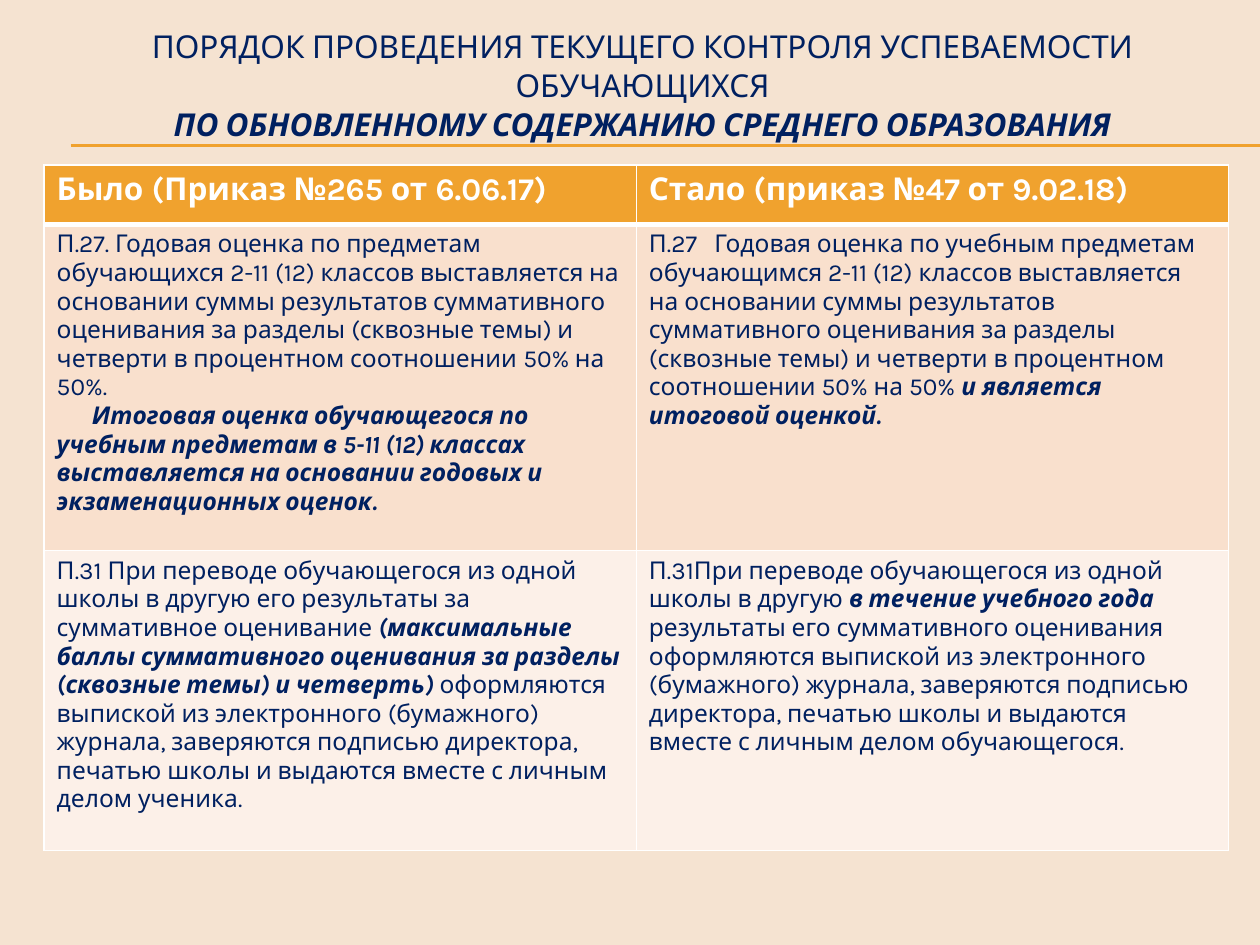
from pptx import Presentation
from pptx.dml.color import RGBColor
from pptx.enum.shapes import MSO_CONNECTOR
from pptx.enum.text import MSO_ANCHOR, PP_ALIGN
from pptx.util import Inches, Pt
from pptx.oxml.ns import qn
from lxml.etree import SubElement, Element

ink = {"back": "F5E3D1", "gold": "F0A22E", "navy": "002060",
       "white": "FFFFFF", "peach": "F9E0CD", "cream": "FCF0E8"}
font = "Karla"


def add_run(para, text, size, color, bold=False, slant=False):
    run = para.add_run()
    run.text = text
    run.font.name = font
    run.font.size = Pt(size)
    run.font.bold = bold
    run.font.italic = slant
    run.font.color.rgb = RGBColor.from_string(ink[color])


def add_edges(cell, edges):
    props = cell._tc.get_or_add_tcPr()
    for spot, (side, width) in enumerate(edges.items()):
        line = Element(qn(f"a:ln{side}"), w=str(Pt(width)))
        fill = SubElement(line, qn("a:solidFill"))
        SubElement(fill, qn("a:srgbClr"), val=ink["white"])
        props.insert(spot, line)


deck = Presentation()
deck.slide_width = Inches(10)
deck.slide_height = Inches(7.5)
slide = deck.slides.add_slide(deck.slide_layouts[5])
slide.background.fill.solid()
slide.background.fill.fore_color.rgb = RGBColor.from_string(ink["back"])

for y in (1.15, 1.16):
    rule = slide.shapes.add_connector(
        MSO_CONNECTOR.STRAIGHT, Inches(0.56), Inches(y), deck.slide_width, Inches(y))
    rule.line.color.rgb = RGBColor.from_string(ink["gold"])
    rule.line.width = Pt(0.75)
    SubElement(rule._element.spPr, qn("a:effectLst"))

left = Inches(0.35)
title = slide.shapes.title
title.left, title.top = left, Inches(0.21)
title.width, title.height = Inches(9.5), Inches(0.92)
frame = title.text_frame
frame.word_wrap = True
frame.vertical_anchor = MSO_ANCHOR.MIDDLE
para = frame.paragraphs[0]
para.alignment = PP_ALIGN.CENTER
para.line_spacing = 1.03
add_run(para, "ПОРЯДОК ПРОВЕДЕНИЯ ТЕКУЩЕГО КОНТРОЛЯ УСПЕВАЕМОСТИ ОБУЧАЮЩИХСЯ", 18, "navy")
para.add_line_break()
add_run(para, "ПО ОБНОВЛЕННОМУ СОДЕРЖАНИЮ СРЕДНЕГО ОБРАЗОВАНИЯ", 18, "navy", True, True)

heads = ["Было (Приказ №265 от 6.06.17)", "Стало (приказ №47 от 9.02.18)"]
body = [
    [
        [[("П.27. Годовая оценка по предметам обучающихся 2-11 (12) классов выставляется на "
           "основании суммы результатов суммативного оценивания за разделы (сквозные темы) и "
           "четверти в процентном соотношении 50% на 50%.", False)],
         [("Итоговая оценка обучающегося по учебным предметам в 5-11 (12) классах "
           "выставляется на основании годовых и экзаменационных оценок.", True)]],
        [[("П.27\tГодовая оценка по учебным предметам обучающимся 2-11 (12) классов "
           "выставляется на основании суммы результатов суммативного оценивания за разделы "
           "(сквозные темы) и четверти в процентном соотношении 50% на 50% ", False),
          ("и является итоговой оценкой.", True)]],
    ],
    [
        [[("П.31 При переводе обучающегося из одной школы в другую его результаты за "
           "суммативное оценивание ", False),
          ("(максимальные баллы суммативного оценивания за разделы (сквозные темы) и "
           "четверть) ", True),
          ("оформляются выпиской из электронного (бумажного) журнала, заверяются подписью "
           "директора, печатью школы и выдаются вместе с личным делом ученика.", False)]],
        [[("П.31При переводе обучающегося из одной школы в другую ", False),
          ("в течение учебного года ", True),
          ("результаты его суммативного оценивания оформляются выпиской из электронного "
           "(бумажного) журнала, заверяются подписью директора, печатью школы и выдаются "
           "вместе с личным делом обучающегося.", False)]],
    ],
]

tall = [0.47, 2.59, 2.38]
grid = slide.shapes.add_table(
    3, 2, left, Inches(1.31), Inches(9.4), Inches(sum(tall))).table
for col in grid.columns:
    col.width = Inches(4.7)
for row, high in zip(grid.rows, tall):
    row.height = Inches(high)

for r, tint in enumerate(["gold", "peach", "cream"]):
    for c in range(2):
        cell = grid.cell(r, c)
        cell.fill.solid()
        cell.fill.fore_color.rgb = RGBColor.from_string(ink[tint])
        add_edges(cell, {"L": 1, "R": 1, "T": 3 if r == 1 else 1, "B": 3 if r == 0 else 1})
        frame = cell.text_frame
        if r == 0:
            add_run(frame.paragraphs[0], heads[c], 18, "white", True)
            continue
        for n, runs in enumerate(body[r - 1][c]):
            para = frame.add_paragraph() if n else frame.paragraphs[0]
            props = para._p.get_or_add_pPr()
            if n:
                props.set("marL", "0")
                props.set("indent", str(Inches(0.28)))
            if "\t" in runs[0][0]:
                tabs = SubElement(props, qn("a:tabLst"))
                SubElement(tabs, qn("a:tab"), pos=str(Inches(0.52)), algn="l")
            for text, strong in runs:
                add_run(para, text, 14, "navy", strong, strong)

deck.save("out.pptx")
